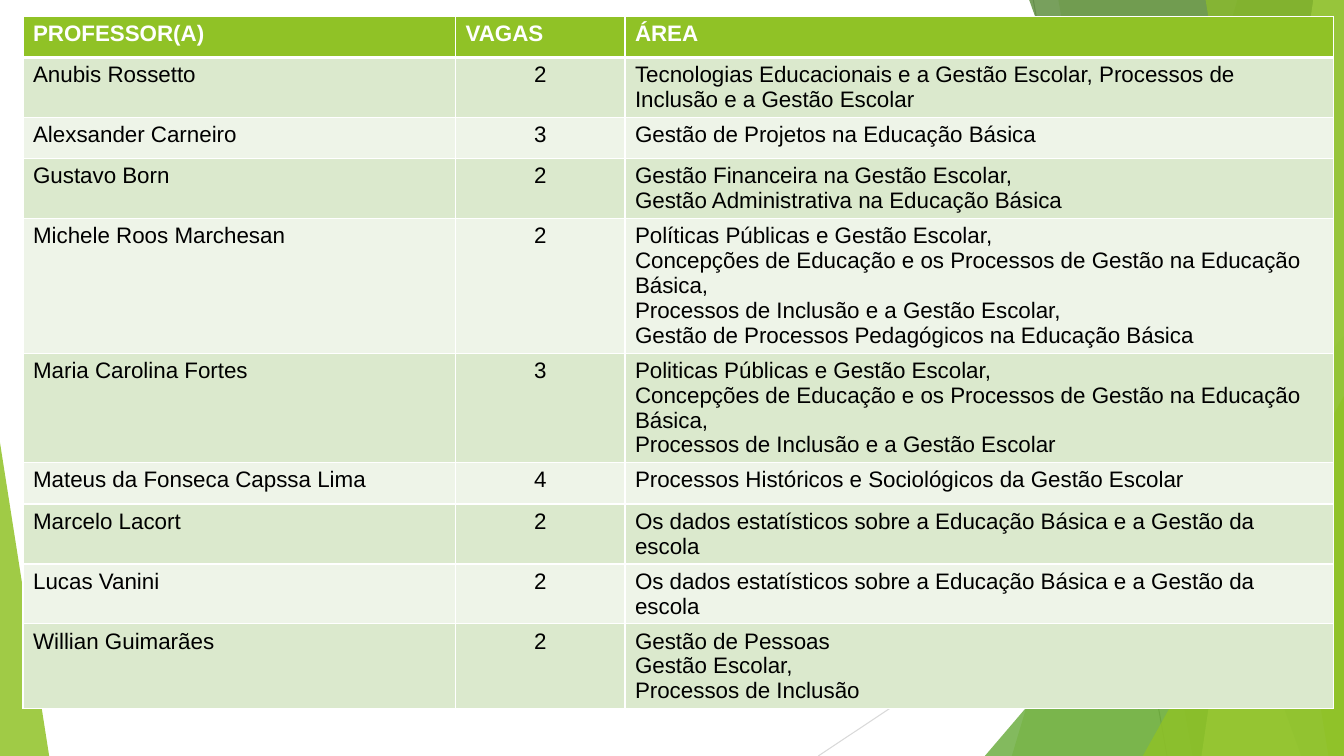
from dataclasses import dataclass

from lxml.etree import SubElement
from pptx import Presentation
from pptx.dml.color import RGBColor as RGB
from pptx.enum.shapes import MSO_CONNECTOR as CONNECTOR, MSO_SHAPE as SHAPE
from pptx.enum.text import PP_ALIGN as ALIGN
from pptx.oxml.ns import qn
from pptx.util import Cm, Pt


@dataclass(frozen=True)
class Theme:
    font: str = "Arial"
    size: int = 16
    white: str = "FFFFFF"
    black: str = "000000"
    lime: str = "90C226"
    pale_lime: str = "C0E474"
    green: str = "54A021"
    dark_green: str = "3F7819"
    gray: str = "BFBFBF"
    light_gray: str = "D9D9D9"
    odd_row: str = "DBE9CD"
    even_row: str = "EEF4E8"
    rule: int = 1
    header_rule: int = 3
    hairline: float = 0.75


THEME = Theme()
WIDTH, HEIGHT = 33.87, 19.05
COLUMNS = (10.9, 4.27, 17.86)
ROW_HEIGHT = 1.04

HEADER = ("PROFESSOR(A)", "VAGAS", "ÁREA")
POLICIES = "Políticas Públicas e Gestão Escolar,"
CONCEPTS = "Concepções de Educação e os Processos de Gestão na Educação Básica,"
INCLUSION = "Processos de Inclusão e a Gestão Escolar"
STATISTICS = "Os dados estatísticos sobre a Educação Básica e a Gestão da escola"
PROFESSORS = (
    ("Anubis Rossetto", 2,
     ("Tecnologias Educacionais e a Gestão Escolar, " + INCLUSION,)),
    ("Alexsander Carneiro", 3, ("Gestão de Projetos na Educação Básica",)),
    ("Gustavo Born", 2,
     ("Gestão Financeira na Gestão Escolar,",
      "Gestão Administrativa na Educação Básica")),
    ("Michele Roos Marchesan", 2,
     (POLICIES, CONCEPTS, INCLUSION + ",",
      "Gestão de Processos Pedagógicos na Educação Básica")),
    ("Maria Carolina Fortes", 3,
     ("Politicas Públicas e Gestão Escolar,", CONCEPTS, INCLUSION)),
    ("Mateus da Fonseca Capssa Lima", 4,
     ("Processos Históricos e Sociológicos da Gestão Escolar",)),
    ("Marcelo Lacort", 2, (STATISTICS,)),
    ("Lucas Vanini", 2, (STATISTICS,)),
    ("Willian Guimarães", 2,
     ("Gestão de Pessoas", "Gestão Escolar,", "Processos de Inclusão")),
)


def paint(sp, color, opacity):
    sp.shadow.inherit = False
    sp.line.fill.background()
    sp.fill.solid()
    sp.fill.fore_color.rgb = RGB.from_string(color)
    clr = sp.fill._xPr.find(qn("a:solidFill"))[0]
    SubElement(clr, qn("a:alpha"), val=str(opacity * 1000))


def add_line(s, start, end, color):
    ends = [Cm(v) for v in (*start, *end)]
    line = s.shapes.add_connector(CONNECTOR.STRAIGHT, *ends)
    line.line.color.rgb = RGB.from_string(color)
    line.line.width = Pt(THEME.hairline)
    SubElement(line._element.spPr, qn("a:effectLst"))


def add_right_panel(s, top_x, bottom_x, color, opacity):
    top = -0.02
    corners = [(top_x, top), (WIDTH, top), (WIDTH, HEIGHT), (bottom_x, HEIGHT)]
    points = [(Cm(x), Cm(y)) for x, y in corners]
    builder = s.shapes.build_freeform(*points[0], scale=1.0)
    builder.add_line_segments(points[1:], close=True)
    paint(builder.convert_to_shape(), color, opacity)


def add_triangle(s, x, width, height, apex, color, opacity):
    sp = s.shapes.add_shape(SHAPE.ISOSCELES_TRIANGLE, Cm(x),
                            Cm(HEIGHT - height), Cm(width), Cm(height))
    sp.adjustments[0] = apex
    paint(sp, color, opacity)


def add_background(s):
    add_line(s, (26.04, 0), (29.41, HEIGHT), THEME.gray)
    add_line(s, (WIDTH, 10.24), (20.62, HEIGHT), THEME.light_gray)
    add_right_panel(s, 31.19, 25.5, THEME.lime, 30)
    add_right_panel(s, 26.67, 30.05, THEME.lime, 20)
    add_triangle(s, 24.82, 9.05, 10.59, 1, THEME.green, 72)
    add_right_panel(s, 25.93, 32.79, THEME.dark_green, 70)
    add_right_panel(s, 33.1, 30.28, THEME.pale_lime, 70)
    add_right_panel(s, 30.38, 33.48, THEME.lime, 65)
    add_triangle(s, 28.8, 5.07, 9.07, 1, THEME.lime, 80)
    add_triangle(s, 0, 1.24, 7.9, 0, THEME.lime, 85)


def write(tf, text, color=THEME.black, bold=False, align=None):
    for i, line in enumerate(text):
        p = tf.add_paragraph() if i else tf.paragraphs[0]
        p.alignment = align
        r = p.add_run()
        r.text = line
        r.font.name = THEME.font
        r.font.size = Pt(THEME.size)
        r.font.bold = bold
        r.font.color.rgb = RGB.from_string(color)


def set_borders(cell, top, bottom):
    tcPr = cell._tc.get_or_add_tcPr()
    sides = {"L": THEME.rule, "R": THEME.rule, "T": top, "B": bottom}
    for side, width in sides.items():
        ln = SubElement(tcPr, qn(f"a:ln{side}"), w=str(Pt(width)))
        fill = SubElement(ln, qn("a:solidFill"))
        SubElement(fill, qn("a:srgbClr"), val=THEME.white)


def fill_row(row, texts, fill, aligns, top=THEME.rule, bottom=THEME.rule,
             **text_format):
    row.height = Cm(ROW_HEIGHT)
    for cell, text, align in zip(row.cells, texts, aligns):
        set_borders(cell, top, bottom)
        cell.fill.solid()
        cell.fill.fore_color.rgb = RGB.from_string(fill)
        write(cell.text_frame, text, align=align, **text_format)


def add_professors(s):
    count = len(PROFESSORS) + 1
    table = s.shapes.add_table(count, len(COLUMNS), Cm(0.58), Cm(0.41),
                               Cm(sum(COLUMNS)), Cm(ROW_HEIGHT * count)).table
    for column, width in zip(table.columns, COLUMNS):
        column.width = Cm(width)
    fill_row(table.rows[0], [(title,) for title in HEADER], THEME.lime,
             (None, None, None), bottom=THEME.header_rule,
             color=THEME.white, bold=True)
    for i, (name, places, areas) in enumerate(PROFESSORS, 1):
        fill_row(table.rows[i], ((name,), (str(places),), areas),
                 THEME.odd_row if i % 2 else THEME.even_row,
                 (None, ALIGN.CENTER, None),
                 top=THEME.header_rule if i == 1 else THEME.rule)


def main():
    prs = Presentation()
    prs.slide_width, prs.slide_height = Cm(WIDTH), Cm(HEIGHT)
    s = prs.slides.add_slide(prs.slide_layouts[6])
    add_background(s)
    add_professors(s)
    prs.save("out.pptx")


if __name__ == "__main__":
    main()
